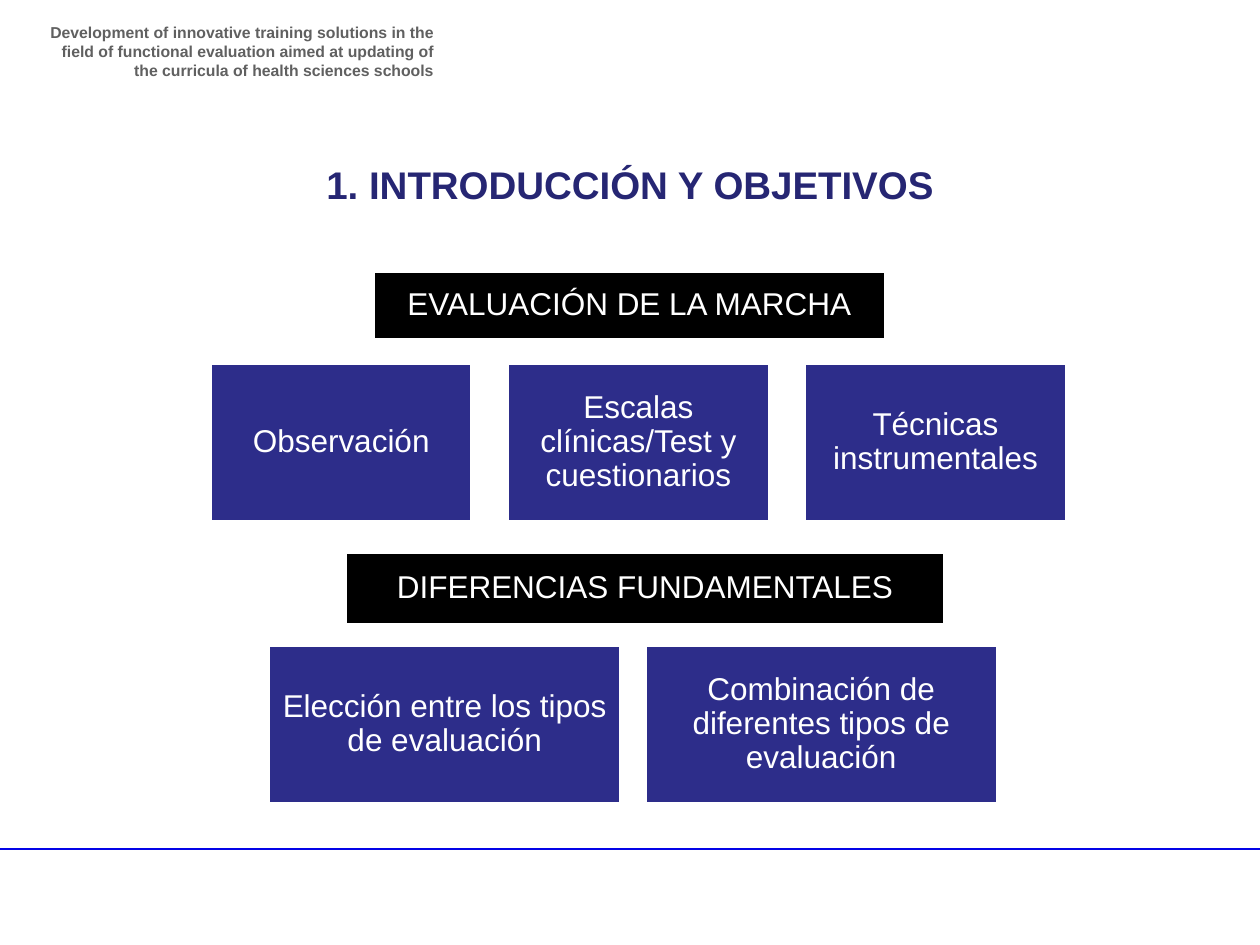
import pptx
import pptx.util
import pptx.dml.color
import pptx.enum.shapes
import pptx.enum.text
import pptx.oxml.xmlchemy
from lxml import etree

Cm, Pt = pptx.util.Cm, pptx.util.Pt
ALIGN = pptx.enum.text.PP_ALIGN
ANCHOR = pptx.enum.text.MSO_ANCHOR

COLORS = {"title": "262673", "header": "606060", "black": "000000",
          "box": "2D2D8A", "white": "FFFFFF", "rule": "0404E6"}
HEADER = ("Development of innovative training solutions in the ﬁeld of functional "
          "evaluation aimed at updating of the curricula of health sciences schools")
TITLE = "1. INTRODUCCIÓN Y OBJETIVOS"

# Each row: fill, left, top, box width, box height, gap (cm), labels
ROWS = [
    ("black", 7.52, 5.46, 10.34, 1.4, 0, ["EVALUACIÓN DE LA MARCHA"]),
    ("box", 4.24, 7.32, 5.28, 3.2, 0.71,
     ["Observación", "Escalas clínicas/Test y cuestionarios", "Técnicas instrumentales"]),
    ("black", 6.96, 11.13, 12.09, 1.47, 0, ["DIFERENCIAS FUNDAMENTALES"]),
    ("box", 5.41, 13, 7.11, 3.2, 0.48,
     ["Elección entre los tipos de evaluación",
      "Combinación de diferentes tipos de evaluación"]),
]


def rgb(name):
    return pptx.dml.color.RGBColor.from_string(COLORS[name])


def write(tf, text, size, color, align, bold=False):
    tf.word_wrap = True
    p = tf.paragraphs[0]
    p.alignment = align
    r = p.add_run()
    r.text = text
    r.font.name = "Arial"
    r.font.size = Pt(size)
    r.font.bold = bold
    r.font.color.rgb = rgb(color)
    return p


def add_box(s, text, fill, left, top, width, height):
    sp = s.shapes.add_shape(pptx.enum.shapes.MSO_SHAPE.RECTANGLE,
                            Cm(left), Cm(top), Cm(width), Cm(height))
    sp.shadow.inherit = False
    sp.fill.solid()
    sp.fill.fore_color.rgb = rgb(fill)
    sp.line.color.rgb = rgb("white")
    sp.line.width = Pt(2)
    tf = sp.text_frame
    tf.margin_left = tf.margin_right = tf.margin_top = tf.margin_bottom = Cm(0.03)
    tf.vertical_anchor = ANCHOR.MIDDLE
    write(tf, text, 18, "white", ALIGN.CENTER).line_spacing = 0.9


def add_rule(s, top):
    line = s.shapes.add_connector(pptx.enum.shapes.MSO_CONNECTOR.STRAIGHT,
                                  Cm(-0.13), Cm(top), Cm(25.4), Cm(top))
    line.line.color.rgb = rgb("rule")
    line.line.width = Pt(1)
    etree.SubElement(line._element.spPr, pptx.oxml.ns.qn("a:effectLst"))


def main():
    prs = pptx.Presentation()
    prs.slide_width, prs.slide_height = Cm(25.4), Cm(19.05)
    s = prs.slides.add_slide(prs.slide_layouts[5])

    add_rule(s, 17.12)
    header = s.shapes.add_textbox(Cm(0.71), Cm(0.33), Cm(8.28), Cm(1.19))
    write(header.text_frame, HEADER, 9, "header", ALIGN.RIGHT, bold=True)

    title = s.shapes.title
    title.left, title.top, title.width, title.height = Cm(1.4), Cm(3.12), Cm(22.6), Cm(1.19)
    title.text_frame.vertical_anchor = ANCHOR.TOP
    title.text_frame.auto_size = pptx.enum.text.MSO_AUTO_SIZE.SHAPE_TO_FIT_TEXT
    write(title.text_frame, TITLE, 22, "title", ALIGN.CENTER, bold=True)

    for fill, left, top, width, height, gap, labels in ROWS:
        for i, label in enumerate(labels):
            add_box(s, label, fill, left + i * (width + gap), top, width, height)

    prs.save("out.pptx")


if __name__ == "__main__":
    main()
